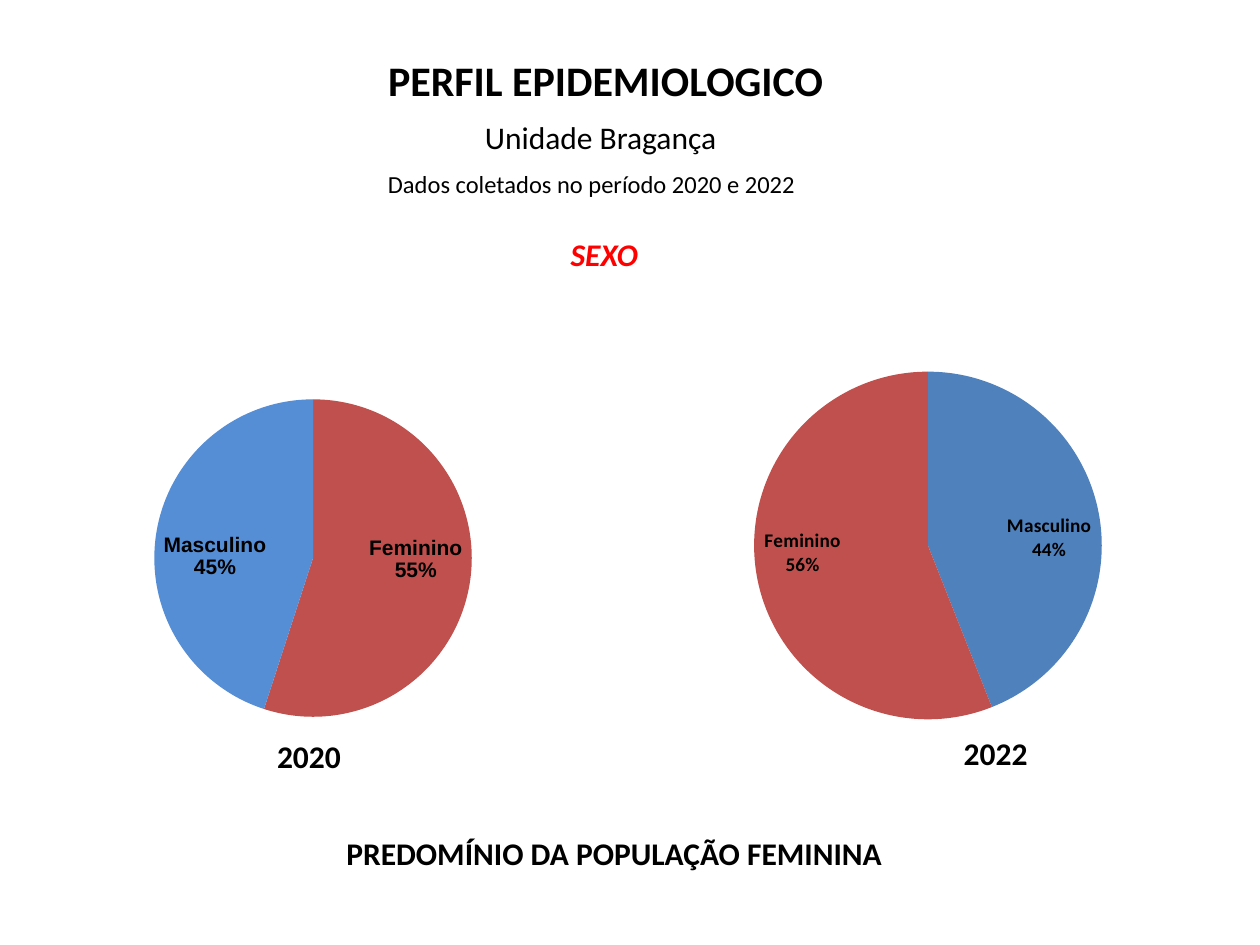
from dataclasses import dataclass

from lxml.etree import SubElement
from pptx import Presentation
from pptx.chart.data import CategoryChartData
from pptx.dml.color import RGBColor
from pptx.enum.chart import XL_CHART_TYPE, XL_LABEL_POSITION
from pptx.enum.text import MSO_ANCHOR, MSO_AUTO_SIZE, PP_ALIGN
from pptx.oxml.ns import qn
from pptx.slide import Slide
from pptx.text.text import Font
from pptx.util import Inches, Pt

UNIT = Inches(0.1)  # the slide is a grid of 100 columns by 75 rows
COLUMNS, ROWS = 100, 75
TITLE_ONLY = 5


@dataclass(frozen=True)
class Theme:
    font: str = "Calibri"
    label_font: str = "Arial"
    text: str = "000000"
    accent: str = "FF0000"
    female: str = "C0504D"
    male_2020: str = "558ED5"
    male_2022: str = "4F81BD"
    title: int = 24
    heading: int = 18
    note: int = 14
    chart: int = 10


THEME = Theme()


@dataclass(frozen=True)
class Box:
    column: float
    row: float
    columns: float
    rows: float

    def lengths(self) -> dict[str, int]:
        return {
            "left": round(self.column * UNIT),
            "top": round(self.row * UNIT),
            "width": round(self.columns * UNIT),
            "height": round(self.rows * UNIT),
        }


@dataclass(frozen=True)
class Caption:
    text: str
    box: Box
    size: int = THEME.heading
    bold: bool = True
    italic: bool = False
    color: str = THEME.text


@dataclass(frozen=True)
class Sector:
    name: str
    percent: int
    color: str


@dataclass(frozen=True)
class Pie:
    box: Box
    plot: tuple[float, float, float, float]  # shares of the chart: x, y, w, h
    sectors: tuple[Sector, ...]
    label_size: int
    label_font: str


TITLE = Caption("PERFIL EPIDEMIOLOGICO", Box(29.8, 3.8, 36.9, 5), THEME.title)
CAPTIONS = (
    Caption("Unidade Bragança", Box(37.5, 8.9, 20.6, 4), bold=False),
    Caption("Dados coletados no período 2020 e 2022", Box(29.8, 12.9, 35.1, 3.4),
            THEME.note, bold=False),
    Caption("SEXO", Box(44.3, 18.2, 7.4, 4), italic=True, color=THEME.accent),
    Caption("2020", Box(21, 58, 7.1, 4)),
    Caption("2022", Box(75.5, 57.8, 7.1, 4)),
    Caption("PREDOMÍNIO DA POPULAÇÃO FEMININA", Box(26.5, 65.7, 44.9, 4)),
)
PIES = (
    Pie(Box(-0.4, 29.6, 50, 30), (0.06, 0.07, 0.89, 0.84),
        (Sector("Feminino", 55, THEME.female), Sector("Masculino", 45, THEME.male_2020)),
        12, THEME.label_font),
    Pie(Box(48.9, 27.1, 50, 30), (0.02, 0.08, 0.95, 0.92),
        (Sector("Masculino", 44, THEME.male_2022), Sector("Feminino", 56, THEME.female)),
        11, THEME.font),
)


def set_format(target: object, values: dict[str, object]) -> None:
    for name, value in values.items():
        setattr(target, name, value)


def format_font(font: Font, size: int, name: str = THEME.font, bold: bool = False,
                italic: bool = False, color: str = THEME.text) -> None:
    set_format(font, {"name": name, "size": Pt(size), "bold": bold, "italic": italic})
    font.color.rgb = RGBColor.from_string(color)


def write_caption(shape, caption: Caption) -> None:
    set_format(shape, caption.box.lengths())
    frame = shape.text_frame
    set_format(frame, {
        "text": caption.text,
        "word_wrap": False,
        "auto_size": MSO_AUTO_SIZE.SHAPE_TO_FIT_TEXT,
        "vertical_anchor": MSO_ANCHOR.TOP,
    })
    paragraph = frame.paragraphs[0]
    paragraph.alignment = PP_ALIGN.LEFT
    format_font(paragraph.runs[0].font, caption.size, bold=caption.bold,
                italic=caption.italic, color=caption.color)


def place_plot(chart, shares: tuple[float, float, float, float]) -> None:
    """Fix the inner plot area by hand, which has no public method."""
    plot_area = chart.plots[0]._element.getparent()
    layout = plot_area.find(qn("c:layout"))
    if layout is None:
        layout = SubElement(plot_area, qn("c:layout"))
        plot_area.insert(0, layout)
    manual = SubElement(layout, qn("c:manualLayout"))
    settings = {"layoutTarget": "inner", "xMode": "edge", "yMode": "edge",
                **dict(zip("xywh", shares))}
    for name, value in settings.items():
        SubElement(manual, qn(f"c:{name}")).set("val", str(value))


def label_sectors(plot, pie: Pie) -> None:
    plot.has_data_labels = True
    labels = plot.data_labels
    set_format(labels, {
        "show_category_name": True,
        "show_percentage": True,
        "show_value": False,
        "number_format": "0%",
        "number_format_is_linked": False,
        "position": XL_LABEL_POSITION.INSIDE_END,
    })
    format_font(labels.font, pie.label_size, pie.label_font, bold=True)
    element = labels._element
    separator = SubElement(element, qn("c:separator"))
    separator.text = "\n"
    element.find(qn("c:showPercent")).addnext(separator)
    bubble_size = element.find(qn("c:showBubbleSize"))
    if bubble_size is not None:
        bubble_size.addnext(separator)


def draw_pie(slide: Slide, pie: Pie) -> None:
    data = CategoryChartData()
    data.categories = [sector.name for sector in pie.sectors]
    data.add_series("Series 1", [sector.percent for sector in pie.sectors])
    box = pie.box.lengths()
    chart = slide.shapes.add_chart(XL_CHART_TYPE.PIE, box["left"], box["top"],
                                   box["width"], box["height"], data).chart
    set_format(chart, {"has_title": False, "has_legend": False})
    format_font(chart.font, THEME.chart)
    plot = chart.plots[0]
    plot.vary_by_categories = True
    for index, sector in enumerate(pie.sectors):
        fill = plot.series[0].points[index].format.fill
        fill.solid()
        fill.fore_color.rgb = RGBColor.from_string(sector.color)
    label_sectors(plot, pie)
    place_plot(chart, pie.plot)


def main() -> None:
    presentation = Presentation()
    set_format(presentation, {"slide_width": COLUMNS * UNIT, "slide_height": ROWS * UNIT})
    slide = presentation.slides.add_slide(presentation.slide_layouts[TITLE_ONLY])
    write_caption(slide.shapes.title, TITLE)
    for caption in CAPTIONS:
        write_caption(slide.shapes.add_textbox(0, 0, UNIT, UNIT), caption)
    for pie in PIES:
        draw_pie(slide, pie)
    presentation.save("out.pptx")


if __name__ == "__main__":
    main()
